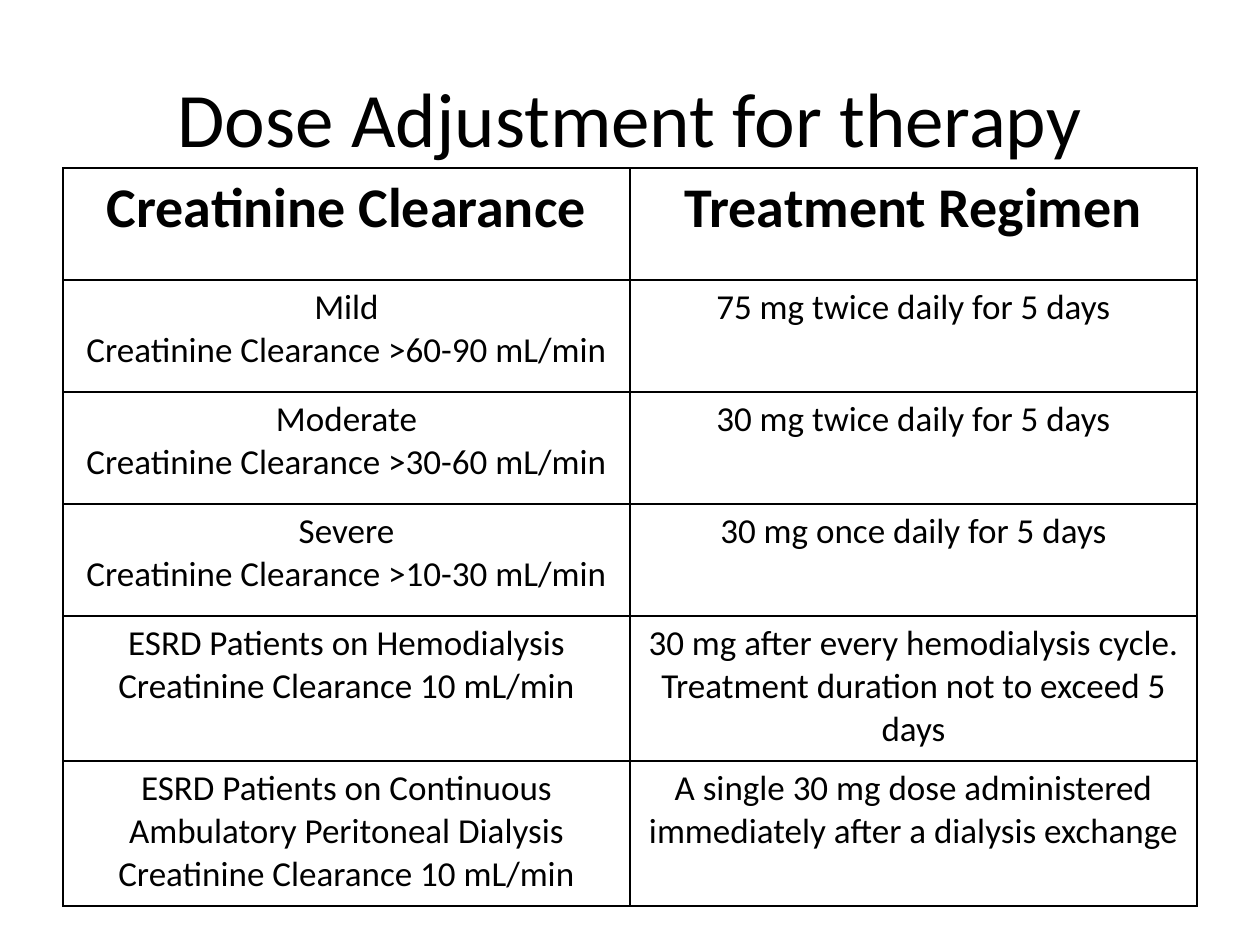
from pptx import Presentation
from pptx.dml.color import RGBColor
from pptx.enum.text import MSO_ANCHOR, PP_ALIGN
from pptx.oxml import parse_xml
from pptx.oxml.ns import nsdecls
from pptx.util import Emu, Pt

BLACK = RGBColor(0, 0, 0)
SCALE = 914400 / 126
HEAD = {"size": Pt(32), "bold": True}
BODY = {"size": Pt(20), "bold": False}

ROWS = [
    (112, "Creatinine Clearance", "Treatment Regimen"),
    (112, "Mild\nCreatinine Clearance >60-90 mL/min",
     "75 mg twice daily for 5 days"),
    (112, "Moderate\nCreatinine Clearance >30-60 mL/min",
     "30 mg twice daily for 5 days"),
    (112, "Severe\nCreatinine Clearance >10-30 mL/min",
     "30 mg once daily for 5 days"),
    (145, "ESRD Patients on Hemodialysis\nCreatinine Clearance 10 mL/min",
     "30 mg after every hemodialysis cycle. "
     "Treatment duration not to exceed 5 days"),
    (145, "ESRD Patients on Continuous Ambulatory Peritoneal Dialysis\n"
     "Creatinine Clearance 10 mL/min",
     "A single 30 mg dose administered immediately after a dialysis exchange"),
]


def px(n):
    return Emu(round(n * SCALE))


def write(par, text, style):
    """Fill a centred paragraph and format its runs."""
    par.text = text
    par.alignment = PP_ALIGN.CENTER
    for run in par.runs:
        for name, value in style.items():
            setattr(run.font, name, value)
        run.font.name = "Calibri"
        run.font.color.rgb = BLACK


deck = Presentation()
deck.slide_width, deck.slide_height = px(1260), px(945)
slide = deck.slides.add_slide(deck.slide_layouts[5])

title = slide.shapes.title
place = {"left": 63, "top": 38, "width": 1134, "height": 158}
for name, value in place.items():
    setattr(title, name, px(value))
title.text_frame.vertical_anchor = MSO_ANCHOR.MIDDLE
write(title.text_frame.paragraphs[0], "Dose Adjustment for therapy",
      {"size": Pt(44)})

high = sum(row[0] for row in ROWS)
table = slide.shapes.add_table(
    len(ROWS), 2, px(63), px(168), px(1134), px(high)).table
table.first_row = table.horz_banding = False
for col in table.columns:
    col.width = px(567)

for r, (tall, *texts) in enumerate(ROWS):
    table.rows[r].height = px(tall)
    for c, text in enumerate(texts):
        cell = table.cell(r, c)
        write(cell.text_frame.paragraphs[0], text, BODY if r else HEAD)
        props = cell._tc.get_or_add_tcPr()
        for side in "LRTB":
            props.append(parse_xml(
                f'<a:ln{side} {nsdecls("a")} w="{Pt(1)}"><a:solidFill>'
                f'<a:srgbClr val="{BLACK}"/></a:solidFill></a:ln{side}>'))
        cell.fill.background()

deck.save("out.pptx")
